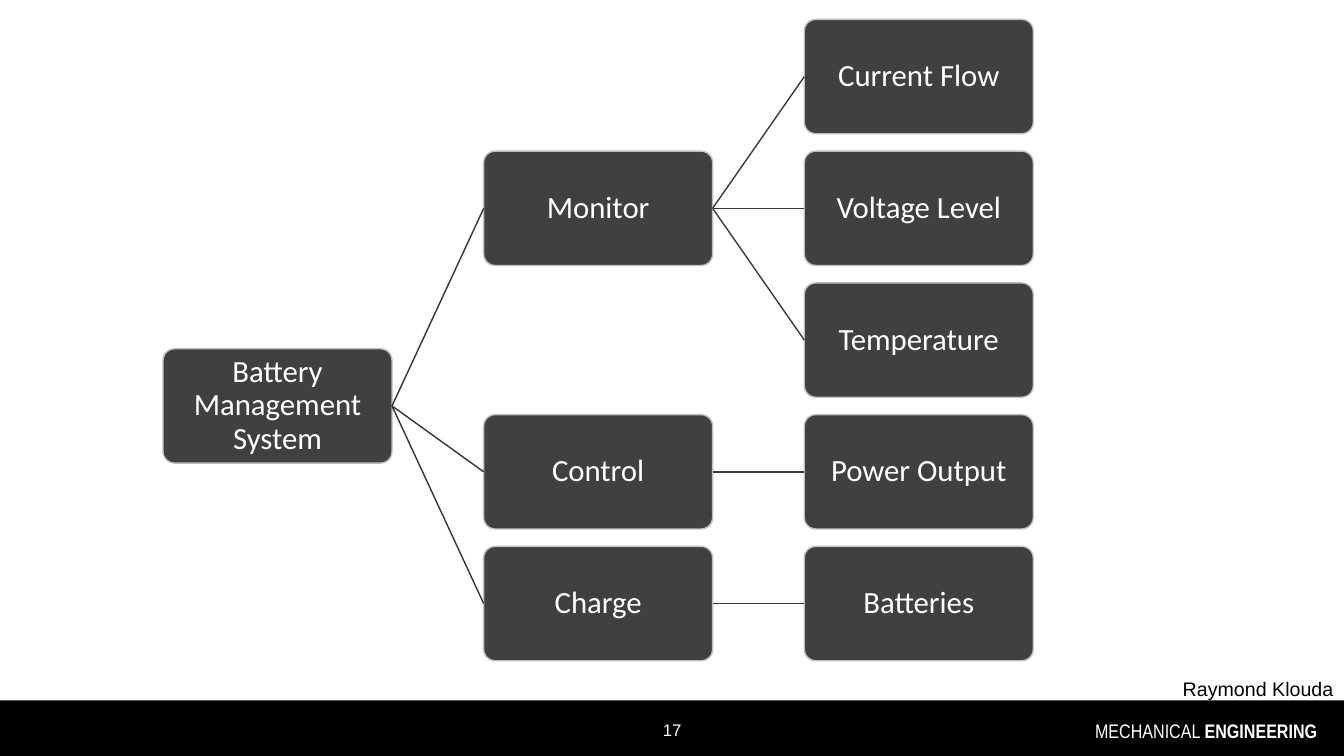
from lxml.etree import SubElement
from pptx import Presentation
from pptx.dml.color import RGBColor
from pptx.enum.shapes import MSO_CONNECTOR, MSO_SHAPE
from pptx.enum.text import MSO_ANCHOR, MSO_AUTO_SIZE, PP_ALIGN
from pptx.oxml.ns import qn
from pptx.util import Cm, Pt

BLACK = RGBColor(0x00, 0x00, 0x00)
WHITE = RGBColor(0xFF, 0xFF, 0xFF)
DARK = RGBColor(0x40, 0x40, 0x40)
PALE = RGBColor(0xBF, 0xBF, 0xBF)
LINKS = (RGBColor(0x33, 0x33, 0x33), RGBColor(0x3A, 0x3A, 0x3A))

NODE = {"name": "Calibri", "size": Pt(22)}
PAGE = {"name": "Arial", "size": Pt(12)}
NAME = {"name": "Arial", "size": Pt(14)}
DEPT = {"name": "Arial Narrow", "size": Pt(14)}

TREE = ("Battery Management System", [
    ("Monitor", [("Current Flow", []), ("Voltage Level", []),
                 ("Temperature", [])]),
    ("Control", [("Power Output", [])]),
    ("Charge", [("Batteries", [])]),
])
LEFT, TOP = 4.11, 0.49
WIDE, HIGH = 5.77, 2.88
COL, ROW = 8.08, 3.32


def apply(item, values):
    for key, value in values.items():
        setattr(item, key, value)


class Deck:
    def __init__(self):
        self.show = Presentation()
        apply(self.show, {"slide_width": Cm(33.87), "slide_height": Cm(19.05)})
        self.slide = self.show.slides.add_slide(self.show.slide_layouts[1])
        self.shapes = self.slide.shapes
        title = self.shapes.title.element
        title.getparent().remove(title)
        self.row = 0

    def fill_text(self, shape, runs, font, color, align, space=1.0, **frame):
        """Fill a shape with one paragraph of (text, bold) runs."""
        apply(shape.text_frame, {"word_wrap": True, **frame})
        para = shape.text_frame.paragraphs[0]
        apply(para, {"alignment": align, "line_spacing": space,
                     "space_before": Pt(0)})
        for text, bold in runs:
            run = para.add_run()
            run.text = text
            apply(run.font, {**font, "bold": bold})
            run.font.color.rgb = color
        return para

    def block(self, kind, box, fill, edge=None):
        shape = self.shapes.add_shape(kind, *map(Cm, box))
        shape.shadow.inherit = False
        shape.fill.solid()
        shape.fill.fore_color.rgb = fill
        if edge is None:
            shape.line.fill.background()
        else:
            shape.line.color.rgb = edge
            shape.line.width = Pt(1)
        return shape

    def label(self, box, runs, font, align, anchor):
        shape = self.shapes.add_textbox(*map(Cm, box))
        self.fill_text(shape, runs, font, WHITE, align, vertical_anchor=anchor)

    def author(self, box, text):
        body = self.slide.placeholders[1]
        apply(body, dict(zip(("left", "top", "width", "height"), map(Cm, box))))
        para = self.fill_text(body, [(text, False)], NAME, BLACK,
                              PP_ALIGN.RIGHT, 0.9,
                              auto_size=MSO_AUTO_SIZE.NONE,
                              vertical_anchor=MSO_ANCHOR.TOP)
        props = para._p.get_or_add_pPr()
        for key in ("marL", "indent"):
            props.set(key, "0")
        SubElement(props, qn("a:buNone"))

    def node(self, text, row, level):
        box = (LEFT + level * COL, TOP + row * ROW, WIDE, HIGH)
        shape = self.block(MSO_SHAPE.ROUNDED_RECTANGLE, box, DARK, PALE)
        shape.adjustments[0] = 0.1
        sides = ("left", "top", "right", "bottom")
        inset = {f"margin_{side}": Cm(0.06) for side in sides}
        self.fill_text(shape, [(text, False)], NODE, WHITE, PP_ALIGN.CENTER,
                       0.9, vertical_anchor=MSO_ANCHOR.MIDDLE, **inset)
        return shape

    def link(self, start, end, color):
        """Join the right side of one node to the left side of another."""
        line = self.shapes.add_connector(MSO_CONNECTOR.STRAIGHT, 0, 0, 0, 0)
        line.begin_connect(start, 3)
        line.end_connect(end, 1)
        line.line.color.rgb = color
        line.line.width = Pt(1)
        SubElement(line.element.spPr, qn("a:effectLst"))

    def tree(self, branch, level=0):
        """Draw a branch, each parent midway between its outer children."""
        text, kids = branch
        drawn = [self.tree(kid, level + 1) for kid in kids]
        if drawn:
            row = (drawn[0][1] + drawn[-1][1]) / 2
        else:
            row = self.row
            self.row += 1
        shape = self.node(text, row, level)
        for kid, _ in drawn:
            self.link(shape, kid, LINKS[level])
        return shape, row


def main():
    deck = Deck()
    deck.block(MSO_SHAPE.RECTANGLE, (0, 17.65, 33.87, 1.4), BLACK)
    deck.label((25.83, 17.98, 7.62, 1.02),
               [("MECHANICAL ", False), ("ENGINEERING", True)],
               DEPT, PP_ALIGN.RIGHT, MSO_ANCHOR.TOP)
    deck.label((13.13, 17.88, 7.62, 1.02), [("17", False)],
               PAGE, PP_ALIGN.CENTER, MSO_ANCHOR.MIDDLE)
    deck.author((24.97, 16.99, 8.89, 0.64), "Raymond Klouda")
    deck.tree(TREE)
    deck.show.save("out.pptx")


if __name__ == "__main__":
    main()
